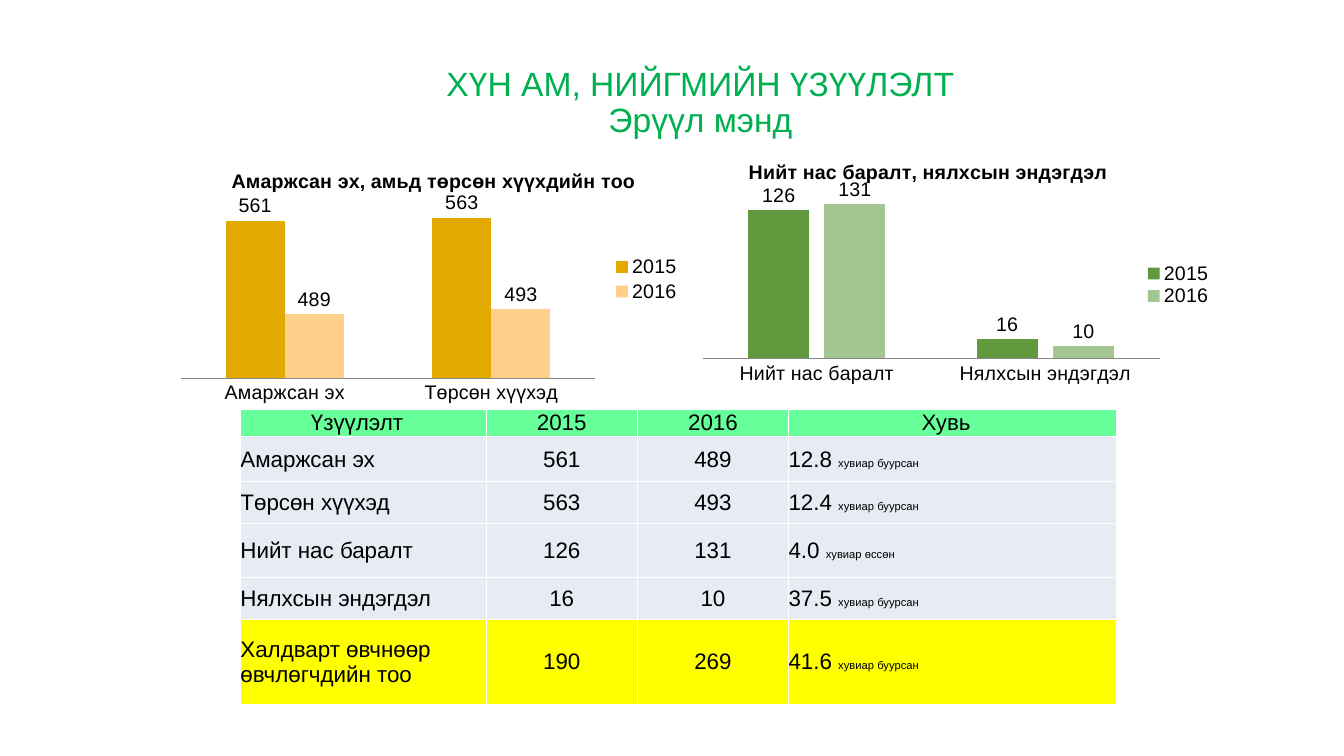
from dataclasses import dataclass

from lxml import etree
from pptx import Presentation
from pptx.chart.data import CategoryChartData
from pptx.dml.color import RGBColor
from pptx.enum.chart import XL_CHART_TYPE, XL_LABEL_POSITION, XL_LEGEND_POSITION, XL_TICK_MARK
from pptx.enum.text import MSO_ANCHOR, PP_ALIGN
from pptx.oxml import parse_xml
from pptx.oxml.ns import nsdecls, qn
from pptx.util import Pt

PX = 9525
CENTER, LEFT = PP_ALIGN.CENTER, PP_ALIGN.LEFT
MIDDLE = MSO_ANCHOR.MIDDLE
COLUMNS = XL_CHART_TYPE.COLUMN_CLUSTERED
OUTSIDE = XL_LABEL_POSITION.OUTSIDE_END
LEGEND_RIGHT = XL_LEGEND_POSITION.RIGHT
NO_TICKS = XL_TICK_MARK.NONE


@dataclass(frozen=True)
class Theme:
    """Colours, font and type sizes of the slide."""
    font: str = "Arial"
    text: str = "000000"
    title: str = "00B050"
    axis: str = "878787"
    border: str = "FFFFFF"
    header: str = "66FF99"
    body: str = "E7EBF4"
    highlight: str = "FFFF00"
    births: tuple = ("E2AA00", "FFD08A")
    deaths: tuple = ("62993E", "A3C592")
    title_size: int = 24
    table_size: int = 16
    chart_size: int = 14
    note_size: int = 8


THEME = Theme()
YEARS = ("2015", "2016")
HEADER = ("Үзүүлэлт", *YEARS, "Хувь")
ROWS = (
    ("Амаржсан эх", "561", "489", "12.8 ", "хувиар буурсан"),
    ("Төрсөн хүүхэд", "563", "493", "12.4 ", "хувиар буурсан"),
    ("Нийт нас баралт", "126", "131", "4.0 ", "хувиар өссөн"),
    ("Нялхсын эндэгдэл", "16", "10", "37.5 ", "хувиар буурсан"),
    ("Халдварт өвчнөөр өвчлөгчдийн тоо", "190", "269", "41.6 ", "хувиар буурсан"),
)
COL_WIDTHS = (234, 144, 144, 312)
ROW_HEIGHTS = (26, 43, 40, 51, 40, 81)
HEADER_INSETS = (12, 0, 0, 12)


def emu(*lengths):
    """Turn pixel lengths into EMU."""
    return [n * PX for n in lengths]


def style_font(font, size, color=THEME.text, bold=False):
    """Set family, size, colour and weight of a font."""
    font.name = THEME.font
    font.size = Pt(size)
    font.bold = bold
    font.color.rgb = RGBColor.from_string(color)


def add_run(p, text, size, color=THEME.text, bold=False):
    """Append one formatted run to a paragraph."""
    r = p.add_run()
    r.text = text
    style_font(r.font, size, color, bold)


def set_title(s, lines, box):
    """Place the title placeholder and write its lines."""
    sp = s.shapes.title
    sp.left, sp.top, sp.width, sp.height = emu(*box)
    tf = sp.text_frame
    tf.word_wrap = True
    tf.vertical_anchor = MIDDLE
    p = tf.paragraphs[0]
    p.alignment = CENTER
    p.line_spacing = 0.9
    for i, line in enumerate(lines):
        if i:
            p.add_line_break()
        add_run(p, line, THEME.title_size, THEME.title)


def set_layout(chart, part, index, inner=False, **fractions):
    """Give a chart part a manual position in fractions of the chart."""
    parent = chart.element.xpath(f"c:chart/c:{part}")[0]
    for old in parent.findall(qn("c:layout")):
        parent.remove(old)
    layout = parse_xml(f"<c:layout {nsdecls('c')}><c:manualLayout/></c:layout>")
    values = {"layoutTarget": "inner"} if inner else {}
    values.update(xMode="edge", yMode="edge", **fractions)
    for name, value in values.items():
        etree.SubElement(layout[0], qn(f"c:{name}")).set("val", str(value))
    parent.insert(index, layout)


def add_columns(s, title, categories, series, colors, box, scale, overlap, plot_box, legend_box):
    """Add a clustered column chart with value labels and a legend."""
    data = CategoryChartData()
    data.categories = categories
    for year, values in zip(YEARS, series):
        data.add_series(year, values)
    chart = s.shapes.add_chart(COLUMNS, *emu(*box), data).chart
    style_font(chart.font, THEME.chart_size)
    chart.has_title = True
    add_run(chart.chart_title.text_frame.paragraphs[0], title, THEME.chart_size, bold=True)
    chart.has_legend = True
    chart.legend.position = LEGEND_RIGHT
    chart.legend.include_in_layout = False
    style_font(chart.legend.font, THEME.chart_size)
    set_layout(chart, "title", 1, x=0.11, y=0.06)
    set_layout(chart, "plotArea", 0, inner=True, **plot_box)
    set_layout(chart, "legend", 1, **legend_box)

    axis = chart.value_axis
    axis.minimum_scale, axis.maximum_scale = scale
    axis.has_major_gridlines = False
    axis.visible = False
    axis = chart.category_axis
    axis.major_tick_mark = NO_TICKS
    axis.format.line.color.rgb = RGBColor.from_string(THEME.axis)
    style_font(axis.tick_labels.font, THEME.chart_size)

    plot = chart.plots[0]
    plot.vary_by_categories = False
    plot.gap_width = 150
    plot.overlap = overlap
    plot.has_data_labels = True
    plot.data_labels.show_value = True
    plot.data_labels.position = OUTSIDE
    style_font(plot.data_labels.font, THEME.chart_size)
    for bars, color in zip(plot.series, colors):
        bars.format.fill.solid()
        bars.format.fill.fore_color.rgb = RGBColor.from_string(color)


def fill_cell(cell, texts, fill, alignment, inset=0):
    """Write a table cell with its fill and thin borders."""
    tc_pr = cell._tc.get_or_add_tcPr()
    for side in "LRTB":
        tc_pr.append(parse_xml(
            f'<a:ln{side} {nsdecls("a")} w="12700"><a:solidFill>'
            f'<a:srgbClr val="{THEME.border}"/></a:solidFill></a:ln{side}>'))
    cell.fill.solid()
    cell.fill.fore_color.rgb = RGBColor.from_string(fill)
    cell.margin_left = cell.margin_top = cell.margin_bottom = 0
    cell.margin_right = inset * PX
    cell.vertical_anchor = MIDDLE
    p = cell.text_frame.paragraphs[0]
    p.alignment = alignment
    for text, size in zip(texts, (THEME.table_size, THEME.note_size)):
        add_run(p, text, size)


def add_indicators(s, left, top):
    """Add the table of health indicators."""
    box = emu(left, top, sum(COL_WIDTHS), sum(ROW_HEIGHTS))
    table = s.shapes.add_table(len(ROW_HEIGHTS), len(COL_WIDTHS), *box).table
    table.first_row = table.horz_banding = False
    for col, width in zip(table.columns, COL_WIDTHS):
        col.width = width * PX
    for row, height in zip(table.rows, ROW_HEIGHTS):
        row.height = height * PX
    for j, (text, inset) in enumerate(zip(HEADER, HEADER_INSETS)):
        fill_cell(table.cell(0, j), [text], THEME.header, CENTER, inset)
    for i, (name, before, after, *change) in enumerate(ROWS, 1):
        fill = THEME.highlight if i == len(ROWS) else THEME.body
        for j, texts in enumerate(([name], [before], [after], change)):
            fill_cell(table.cell(i, j), texts, fill, CENTER if j in (1, 2) else LEFT)


def main():
    """Build the slide and save it."""
    prs = Presentation()
    prs.slide_width, prs.slide_height = emu(1280, 720)
    s = prs.slides.add_slide(prs.slide_layouts[5])
    set_title(s, ("ХҮН АМ, НИЙГМИЙН ҮЗҮҮЛЭЛТ", "Эрүүл мэнд"), (96, 48, 1142, 101))
    add_columns(s, "Нийт нас баралт, нялхсын эндэгдэл",
                ("Нийт нас баралт", "Нялхсын эндэгдэл"), ((126, 16), (131, 10)),
                THEME.deaths, (654, 134, 506, 241), (0, 140), -25,
                dict(x=0.03, y=0.21, w=0.86, h=0.65), dict(x=0.86, y=0.48, w=0.13, h=0.18))
    add_columns(s, "Амаржсан эх, амьд төрсөн хүүхдийн тоо",
                ("Амаржсан эх", "Төрсөн хүүхэд"), ((561, 563), (489, 493)),
                THEME.births, (163, 142, 492, 248), (440, 580), 0,
                dict(x=0.02, y=0.18, w=0.8, h=0.7), dict(x=0.85, y=0.4, w=0.14, h=0.2))
    add_indicators(s, 229, 390)
    prs.save("out.pptx")


if __name__ == "__main__":
    main()
